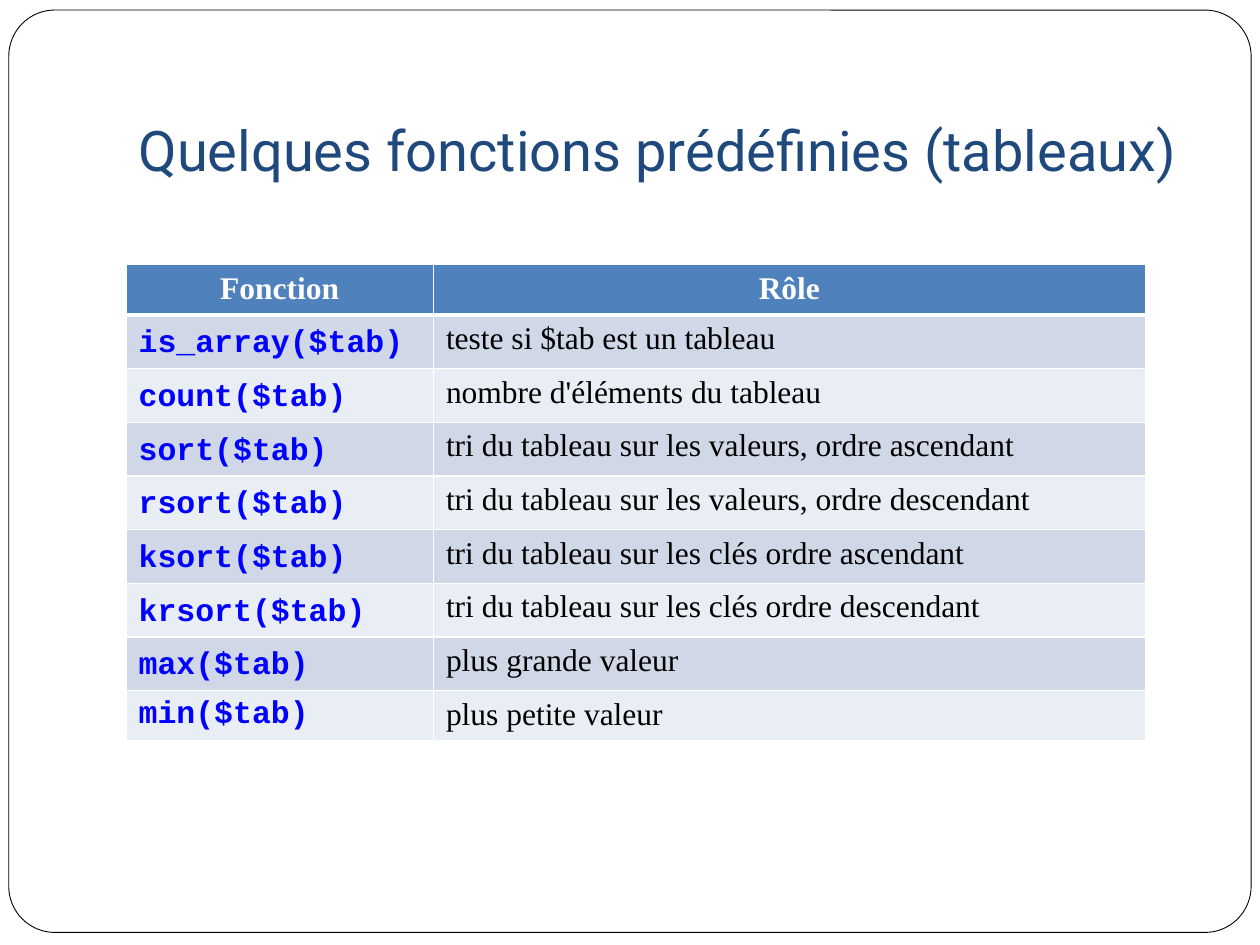
from dataclasses import dataclass

from lxml import etree
from pptx import Presentation
from pptx import util as u
from pptx.dml.color import RGBColor
from pptx.enum import shapes, text
from pptx.oxml import ns


@dataclass(frozen=True)
class Theme:
    paper: str = "FFFFFF"
    outline: str = "000000"
    heading: str = "1F497D"
    header: str = "4F81BD"
    bands: tuple = ("D0D8E8", "E9EDF4")
    code: str = "0000FF"
    body: str = "000000"
    title_font: str = "Roboto"
    code_font: str = "Courier New"
    body_font: str = "Times New Roman"
    title_size: int = 32
    table_size: int = 18


def apply(target, values):
    for name, value in values.items():
        setattr(target, name, value)


class SlideBuilder:
    columns, rows = 100, 75

    def __init__(self, deck, theme):
        self.theme = theme
        self.column = deck.slide_width / self.columns
        self.row = deck.slide_height / self.rows
        self.slide = deck.slides.add_slide(deck.slide_layouts[5])

    def box(self, left, top, width, height):
        return [round(value) for value in (left * self.column, top * self.row,
                                           width * self.column, height * self.row)]

    def add_words(self, frame, words, font, color, size, bold=False, **layout):
        paragraph = frame.paragraphs[0]
        apply(paragraph, layout)
        run = paragraph.add_run()
        run.text = words
        apply(run.font, {"name": font, "size": u.Pt(size), "bold": bold})
        run.font.color.rgb = RGBColor.from_string(color)

    def frame(self, *area, corner):
        border = self.slide.shapes.add_shape(
            shapes.MSO_SHAPE.ROUNDED_RECTANGLE, *self.box(*area))
        border.adjustments[0] = corner
        border.shadow.inherit = False
        border.fill.solid()
        border.fill.fore_color.rgb = RGBColor.from_string(self.theme.paper)
        border.line.color.rgb = RGBColor.from_string(self.theme.outline)
        border.line.width = u.Pt(0.5)
        self.slide.shapes.title.element.addprevious(border.element)

    def title(self, words, *area):
        heading = self.slide.shapes.title
        apply(heading, dict(zip(("left", "top", "width", "height"), self.box(*area))))
        apply(heading.text_frame, {
            "vertical_anchor": text.MSO_ANCHOR.BOTTOM, "word_wrap": True,
            "auto_size": text.MSO_AUTO_SIZE.NONE,
            "margin_left": u.Inches(0.1), "margin_right": u.Inches(0.1),
            "margin_top": u.Inches(0.05), "margin_bottom": u.Inches(0.1)})
        self.add_words(heading.text_frame, words, self.theme.title_font,
                       self.theme.heading, self.theme.title_size,
                       alignment=text.PP_ALIGN.LEFT)

    def cell_style(self, cell, color, edges):
        cell.fill.solid()
        cell.fill.fore_color.rgb = RGBColor.from_string(color)
        properties = cell._tc.get_or_add_tcPr()
        for position, (side, points) in enumerate(edges.items()):
            edge = etree.Element(ns.qn(f"a:ln{side}"), w=str(u.Pt(points)))
            paint = etree.SubElement(edge, ns.qn("a:solidFill"))
            etree.SubElement(paint, ns.qn("a:srgbClr"), val=self.theme.paper)
            properties.insert(position, edge)

    def table(self, headings, entries, left, top, widths, row_height):
        count = len(entries) + 1
        area = self.box(left, top, sum(widths), row_height * count)
        grid = self.slide.shapes.add_table(count, len(widths), *area).table
        for column, width in zip(grid.columns, widths):
            column.width = round(width * self.column)
        for row in grid.rows:
            row.height = round(row_height * self.row)

        theme = self.theme
        for index, heading in enumerate(headings):
            cell = grid.cell(0, index)
            self.cell_style(cell, theme.header, {"L": 1, "R": 1, "T": 1, "B": 3})
            self.add_words(cell.text_frame, heading, theme.body_font, theme.paper,
                           theme.table_size, True, alignment=text.PP_ALIGN.CENTER)

        for number, (function, role) in enumerate(entries, 1):
            code_cell, role_cell = grid.cell(number, 0), grid.cell(number, 1)
            top_edge = 3 if number == 1 else 1
            for cell in (code_cell, role_cell):
                self.cell_style(cell, theme.bands[(number - 1) % 2],
                                {"L": 1, "R": 1, "T": top_edge, "B": 1})
            spacing = {"line_spacing": 1.15} if number < len(entries) else {}
            self.add_words(code_cell.text_frame, function, theme.code_font, theme.code,
                           theme.table_size, True, **spacing)
            self.add_words(role_cell.text_frame, role, theme.body_font, theme.body,
                           theme.table_size)


FUNCTIONS = [
    ("is_array($tab)", "teste si $tab est un tableau"),
    ("count($tab)", "nombre d'éléments du tableau"),
    ("sort($tab)", "tri du tableau sur les valeurs, ordre ascendant"),
    ("rsort($tab)", "tri du tableau sur les valeurs, ordre descendant"),
    ("ksort($tab)", "tri du tableau sur les clés ordre ascendant"),
    ("krsort($tab)", "tri du tableau sur les clés ordre descendant"),
    ("max($tab)", "plus grande valeur"),
    ("min($tab)", "plus petite valeur"),
]


def main():
    deck = Presentation()
    apply(deck, {"slide_width": u.Inches(10), "slide_height": u.Inches(7.5)})
    builder = SlideBuilder(deck, Theme())
    builder.frame(0.7, 0.8, 98.6, 73.2, corner=0.05)
    builder.title("Quelques fonctions prédéfinies (tableaux)", 10, 3, 85, 12.5)
    builder.table(("Fonction", "Rôle"), FUNCTIONS, 10, 21, (24.4, 56.5), 4)
    deck.save("out.pptx")


if __name__ == "__main__":
    main()
